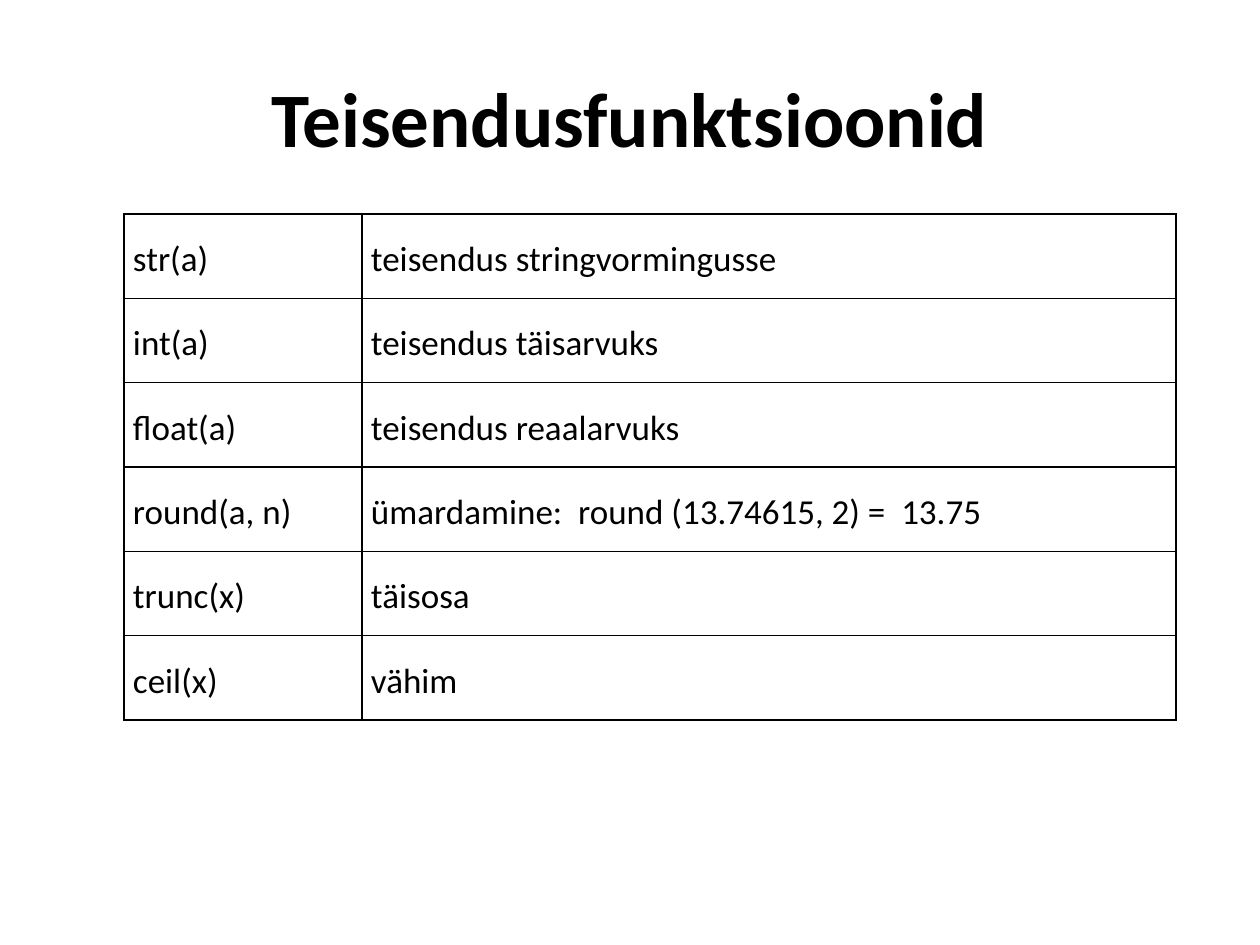
from lxml import etree
from pptx import Presentation
from pptx.dml.color import RGBColor as RGB
from pptx.enum.text import MSO_ANCHOR as ANCHOR, PP_ALIGN as ALIGN
from pptx.oxml.ns import qn
from pptx.util import Emu, Pt

COLORS = {"text": "000000", "border": "000000", "background": "FFFFFF"}
FONT = "Calibri"
ROWS = [
    ("str(a)", "teisendus stringvormingusse"),
    ("int(a)", "teisendus täisarvuks"),
    ("float(a)", "teisendus reaalarvuks"),
    ("round(a, n)", "ümardamine:  round (13.74615, 2) =  13.75"),
    ("trunc(x)", "täisosa"),
    ("ceil(x)", "vähim"),
]
COLUMN_WIDTHS = [238, 814]


def px(n):
    """Convert pixels, 126 to the inch, into EMU."""
    return Emu(round(n * 914400 / 126))


def write(p, text, size, align, bold=False):
    p.text = text
    p.alignment = align
    p.font.name = FONT
    p.font.size = Pt(size)
    p.font.bold = bold
    p.font.color.rgb = RGB.from_string(COLORS["text"])


prs = Presentation()
prs.slide_width, prs.slide_height = px(1260), px(945)
s = prs.slides.add_slide(prs.slide_layouts[6])
s.background.fill.solid()
s.background.fill.fore_color.rgb = RGB.from_string(COLORS["background"])

title = s.shapes.add_textbox(px(63), px(38), px(1134), px(157))
tf = title.text_frame
tf.word_wrap = True
tf.vertical_anchor = ANCHOR.MIDDLE
write(tf.paragraphs[0], "Teisendusfunktsioonid", 44, ALIGN.CENTER, bold=True)

table = s.shapes.add_table(
    len(ROWS), len(COLUMN_WIDTHS), px(124), px(214), px(sum(COLUMN_WIDTHS)), px(506)
).table
table.first_row = table.horz_banding = False
for column, width in zip(table.columns, COLUMN_WIDTHS):
    column.width = px(width)

for r, row in enumerate(ROWS):
    for c, text in enumerate(row):
        cell = table.cell(r, c)
        cell.vertical_anchor = ANCHOR.MIDDLE
        cell.margin_left = cell.margin_right = px(9)
        cell.margin_top = cell.margin_bottom = 0
        p = cell.text_frame.paragraphs[0]
        write(p, text, 20, ALIGN.JUSTIFY)
        p.line_spacing = 1.15

        # Borders must come before the fill in the cell properties
        tc_pr = cell._tc.get_or_add_tcPr()
        for side in ("a:lnL", "a:lnR", "a:lnT", "a:lnB"):
            ln = etree.SubElement(tc_pr, qn(side), w=str(Pt(1)))
            fill = etree.SubElement(ln, qn("a:solidFill"))
            etree.SubElement(fill, qn("a:srgbClr"), val=COLORS["border"])
        cell.fill.background()

prs.save("out.pptx")
